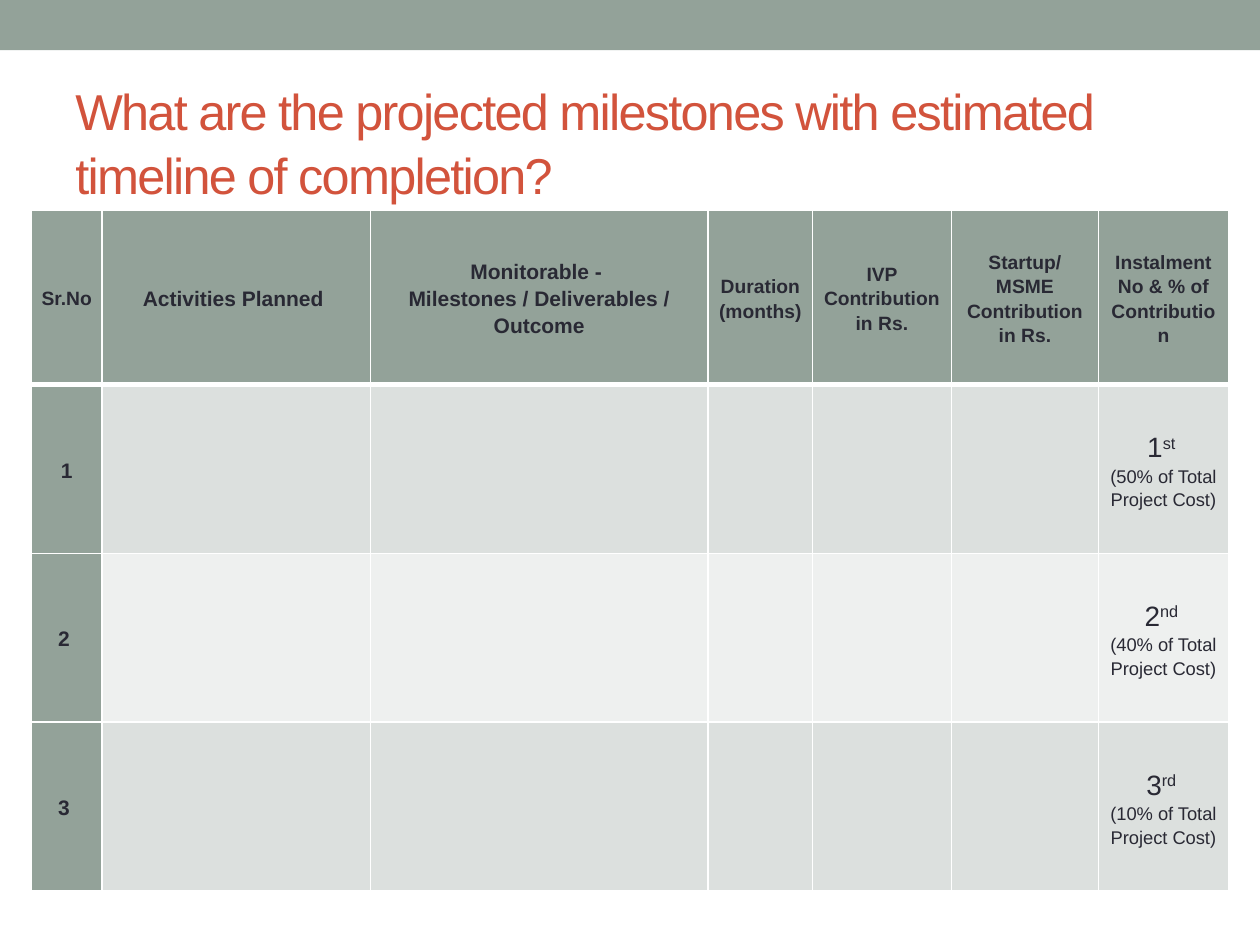
from lxml.etree import SubElement
from pptx import Presentation
from pptx.dml.color import RGBColor
from pptx.enum.shapes import MSO_SHAPE
from pptx.enum.text import MSO_ANCHOR, PP_ALIGN
from pptx.oxml.ns import qn
from pptx.util import Inches, Pt

WIDE, HIGH = 10, 7.5
SAGE, INK, RUST, WHITE = "93A299", "292934", "D2533C", "FFFFFF"
BANDS = ["DCE0DE", "EEF0EF"]
COLS = [0.56, 2.13, 2.68, 0.83, 1.1, 1.17, 1.03]
ROWS = [1.38, 1.34, 1.34, 1.34]
HEADS = [
    (11, ["Sr.No"]),
    (12, ["Activities Planned "]),
    (12, ["Monitorable - ", "Milestones / Deliverables / Outcome"]),
    (11, ["Duration (months)"]),
    (11, ["IVP Contribution", "in Rs."]),
    (11, ["Startup/ MSME", "Contribution", "in Rs."]),
    (11, ["Instalment No & % of Contribution"]),
]
STAGES = [("1", "1", "st ", 50), ("2 ", "2", "nd ", 40), ("3 ", "3", "rd ", 10)]


def paint(fill, tone):
    fill.solid()
    fill.fore_color.rgb = RGBColor.from_string(tone)


def place(x, y, w, h):
    return Inches(x * WIDE), Inches(y * HIGH), Inches(w * WIDE), Inches(h * HIGH)


def add_run(para, text, size, tone=INK, bold=False, **extra):
    run = para.add_run()
    run.text = text
    font = run.font
    font.name, font.size, font.bold = "Arial", Pt(size), bold
    paint(font.fill, tone)
    for key, value in extra.items():
        run._r.get_or_add_rPr().set(key, str(value))


def add_bar(slide):
    bar = slide.shapes.add_shape(MSO_SHAPE.RECTANGLE, *place(0, 0, 1, 0.053))
    bar.shadow.inherit = False
    paint(bar.fill, SAGE)
    bar.line.fill.background()


def add_title(slide, text):
    frame = slide.shapes.add_textbox(*place(0.05, 0.077, 0.9, 0.144)).text_frame
    frame.word_wrap = True
    frame.vertical_anchor = MSO_ANCHOR.MIDDLE
    para = frame.paragraphs[0]
    para.line_spacing = 1.05
    add_run(para, text, 28.8, RUST, spc=-100)


def add_edge(cell, side, width):
    line = SubElement(cell._tc.get_or_add_tcPr(), qn(f"a:ln{side}"), w=str(Pt(width)))
    fill = SubElement(line, qn("a:solidFill"))
    SubElement(fill, qn("a:srgbClr"), val=WHITE)


def style_cell(cell, row, col):
    for side in "LRTB":
        thick = (row, side) in [(0, "B"), (1, "T")]
        add_edge(cell, side, 3 if thick else 1)
    paint(cell.fill, SAGE if row == 0 or col == 0 else BANDS[(row - 1) % 2])
    cell.vertical_anchor = MSO_ANCHOR.MIDDLE
    cell.margin_left = cell.margin_right = Inches(0.07)
    cell.margin_top = cell.margin_bottom = 0


def write_cell(cell, lines):
    frame = cell.text_frame
    for i, runs in enumerate(lines):
        para = frame.add_paragraph() if i else frame.paragraphs[0]
        para.alignment = PP_ALIGN.CENTER
        para.line_spacing = 1.15
        for text, size, extra in runs:
            add_run(para, text, size, **extra)


def add_grid(slide):
    spot = place(0.025, 0.223, sum(COLS) / WIDE, sum(ROWS) / HIGH)
    table = slide.shapes.add_table(len(ROWS), len(COLS), *spot).table
    for col, width in zip(table.columns, COLS):
        col.width = Inches(width)
    for row, height in zip(table.rows, ROWS):
        row.height = Inches(height)
    for r in range(len(ROWS)):
        for c in range(len(COLS)):
            style_cell(table.cell(r, c), r, c)
    return table


def fill_grid(table):
    bold = {"bold": True}
    for c, (size, lines) in enumerate(HEADS):
        write_cell(table.cell(0, c), [[(line, size, bold)] for line in lines])
    for r, (label, digit, suffix, share) in enumerate(STAGES, 1):
        write_cell(table.cell(r, 0), [[(label, 12, bold)]])
        write_cell(table.cell(r, len(COLS) - 1), [
            [(digit, 16, {}), (suffix, 16, {"baseline": 30000})],
            [(f"({share}% of Total Project Cost)", 10.5, {})],
        ])


def main():
    deck = Presentation()
    deck.slide_width, deck.slide_height = Inches(WIDE), Inches(HIGH)
    slide = deck.slides.add_slide(deck.slide_layouts[6])
    add_bar(slide)
    add_title(slide, "What are the projected milestones with estimated timeline of completion?")
    fill_grid(add_grid(slide))
    deck.save("out.pptx")


if __name__ == "__main__":
    main()
